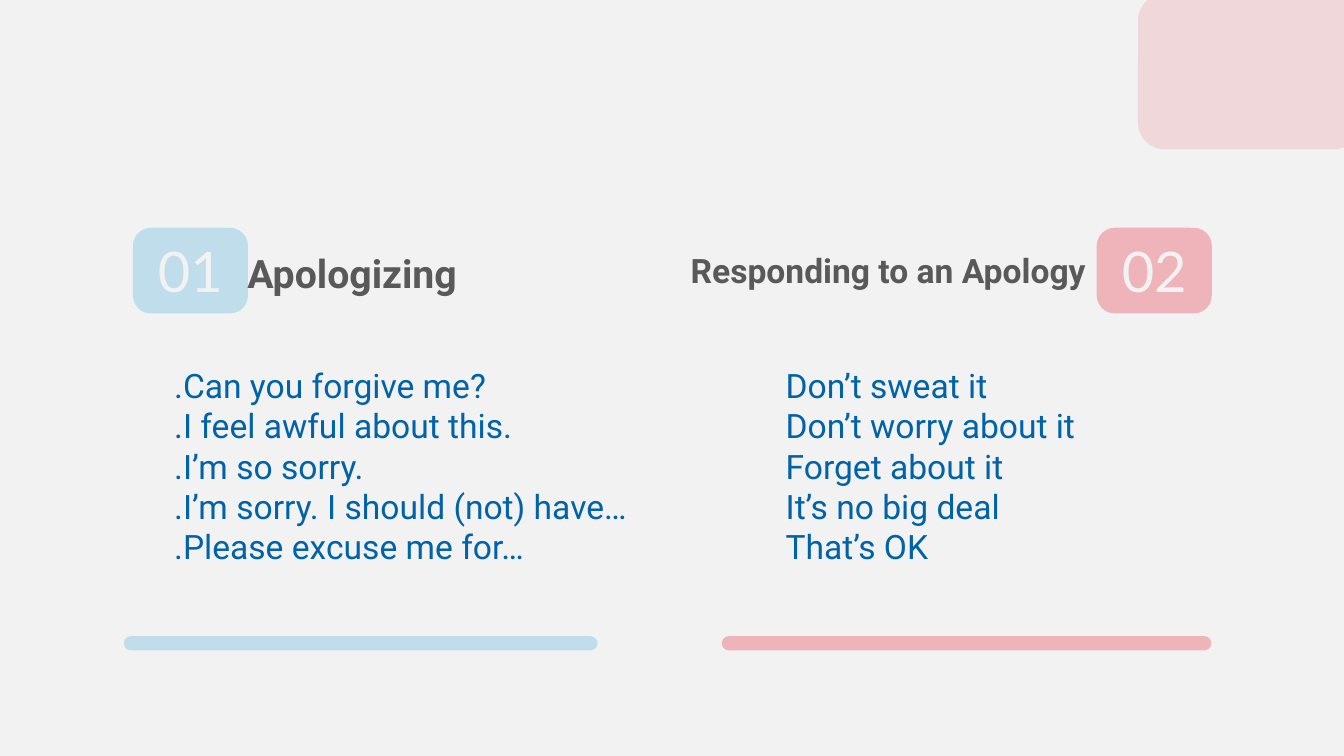
from dataclasses import dataclass

from lxml.etree import SubElement
from pptx import Presentation
from pptx.dml.color import RGBColor
from pptx.enum.shapes import MSO_SHAPE
from pptx.enum.text import MSO_ANCHOR, PP_ALIGN
from pptx.oxml.ns import qn
from pptx.util import Cm, Pt


@dataclass(frozen=True)
class Theme:
    background: str = "F2F2F2"
    blue: str = "AED7E8"
    pink: str = "EE8C94"
    heading: str = "595959"
    phrase: str = "0062A8"
    text_font: str = "Roboto"
    number_font: str = "Lato"
    number_size: int = 40
    phrase_size: int = 24


THEME = Theme()

# Boxes are (left, top, width, height) in centimetres.
CORNER = (28.68, -0.15, 5.61, 3.91)
BADGE_TOP, BADGE_WIDTH, BADGE_HEIGHT = 5.74, 2.9, 2.16
BAR_TOP, BAR_HEIGHT = 16.03, 0.36
PHRASES_TOP, PHRASES_HEIGHT = 9.07, 5.4

SECTIONS = [
    {
        "number": "01",
        "heading": "Apologizing",
        "heading_size": 28,
        "heading_box": (5.61, 6.17, 6.15, 1.43),
        "phrases": [
            ".Can you forgive me?",
            ".I feel awful about this.",
            ".I’m so sorry.",
            ".I’m sorry. I should (not) have…",
            ".Please excuse me for…",
        ],
        "phrases_span": (4.14, 13),
        "badge_left": 3.35,
        "bar_span": (3.12, 11.94),
        "color": THEME.blue,
        "opacity": 74,
    },
    {
        "number": "02",
        "heading": "Responding to an Apology",
        "heading_size": 24,
        "heading_box": (10.46, 6.17, 17.15, 1.27),
        "phrases": [
            "Don’t sweat it",
            "Don’t worry about it",
            "Forget about it",
            "It’s no big deal",
            "That’s OK",
        ],
        "phrases_span": (19.55, 9),
        "badge_left": 27.64,
        "bar_span": (18.19, 12.34),
        "color": THEME.pink,
        "opacity": 60,
    },
]


def write(shape, lines, *, size, color, font=THEME.text_font, bold=False,
          align=PP_ALIGN.LEFT, anchor=MSO_ANCHOR.TOP, wrap=True):
    frame = shape.text_frame
    frame.word_wrap = wrap
    frame.vertical_anchor = anchor
    for index, line in enumerate(lines):
        paragraph = frame.add_paragraph() if index else frame.paragraphs[0]
        paragraph.alignment = align
        run = paragraph.add_run()
        run.text = line
        run.font.name = font
        run.font.size = Pt(size)
        run.font.bold = bold
        run.font.color.rgb = RGBColor.from_string(color)


def add_text(slide, box, lines, **style):
    write(slide.shapes.add_textbox(*map(Cm, box)), lines, **style)


def add_panel(slide, box, color, opacity, rounding):
    """Add a rounded, partly transparent rectangle; opacity is a percentage."""
    panel = slide.shapes.add_shape(MSO_SHAPE.ROUNDED_RECTANGLE, *map(Cm, box))
    panel.adjustments[0] = rounding
    panel.shadow.inherit = False
    panel.line.fill.background()
    panel.fill.solid()
    panel.fill.fore_color.rgb = RGBColor.from_string(color)
    tint = panel.fill._xPr.find(qn("a:solidFill")).find(qn("a:srgbClr"))
    SubElement(tint, qn("a:alpha")).set("val", str(opacity * 1000))
    return panel


def add_section(slide, section):
    tint = section["color"], section["opacity"]
    bar_left, bar_width = section["bar_span"]
    add_panel(slide, (bar_left, BAR_TOP, bar_width, BAR_HEIGHT), *tint, 0.5)

    badge = add_panel(
        slide,
        (section["badge_left"], BADGE_TOP, BADGE_WIDTH, BADGE_HEIGHT),
        *tint, 0.21)
    write(badge, [section["number"]], size=THEME.number_size,
          color=THEME.background, font=THEME.number_font,
          align=PP_ALIGN.CENTER, anchor=MSO_ANCHOR.MIDDLE, wrap=False)

    add_text(slide, section["heading_box"], [section["heading"]],
             size=section["heading_size"], color=THEME.heading, bold=True,
             align=PP_ALIGN.RIGHT, anchor=MSO_ANCHOR.MIDDLE)

    phrases_left, phrases_width = section["phrases_span"]
    add_text(slide,
             (phrases_left, PHRASES_TOP, phrases_width, PHRASES_HEIGHT),
             section["phrases"], size=THEME.phrase_size, color=THEME.phrase)


def main():
    deck = Presentation()
    deck.slide_width, deck.slide_height = Cm(33.87), Cm(19.05)
    slide = deck.slides.add_slide(deck.slide_layouts[6])
    slide.background.fill.solid()
    slide.background.fill.fore_color.rgb = RGBColor.from_string(THEME.background)

    add_panel(slide, CORNER, THEME.pink, 25, 0.17)
    for section in SECTIONS:
        add_section(slide, section)
    deck.save("out.pptx")


if __name__ == "__main__":
    main()
